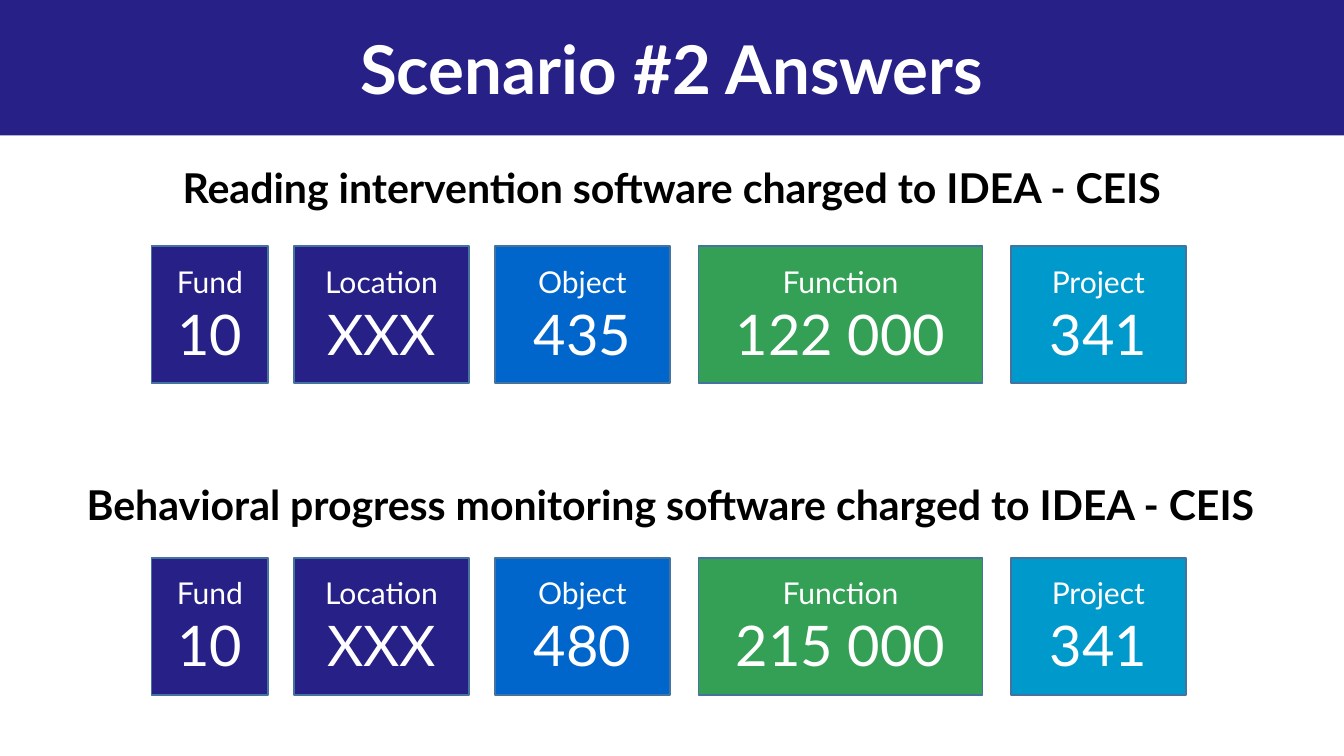
"""Build the slide with the account code answers for scenario 2."""
from pptx import Presentation
from pptx.dml.color import RGBColor
from pptx.enum.shapes import MSO_SHAPE
from pptx.enum.text import MSO_ANCHOR, PP_ALIGN
from pptx.util import Pt

RECT = MSO_SHAPE.RECTANGLE
MIDDLE = MSO_ANCHOR.MIDDLE
CENTER = PP_ALIGN.CENTER

NAVY = RGBColor(0x26, 0x20, 0x87)
BLUE = RGBColor(0x00, 0x66, 0xCC)
GREEN = RGBColor(0x33, 0xA0, 0x56)
CYAN = RGBColor(0x00, 0x99, 0xCC)
EDGE = RGBColor(0x43, 0x73, 0x9E)
WHITE = RGBColor(0xFF, 0xFF, 0xFF)
BLACK = RGBColor(0x00, 0x00, 0x00)

WIDTH, HEIGHT = 720, 405
FIELDS = [
    ("Fund", 81.2, 62.6, NAVY),
    ("Location", 157.5, 93.8, NAVY),
    ("Object", 265.1, 93.8, BLUE),
    ("Function", 374.2, 152.2, GREEN),
    ("Project", 541.5, 93.8, CYAN),
]
ANSWERS = [
    ("Reading intervention software charged to IDEA - CEIS",
     0, 83.5, 131.8, ["10", "XXX", "435", "122 000", "341"]),
    ("Behavioral progress monitoring software charged to IDEA - CEIS",
     -0.7, 253.4, 298.8, ["10", "XXX", "480", "215 000", "341"]),
]


def style(para, text, size, color, bold=False, after=0):
    """Fill a centred paragraph and set its font."""
    para.text = text
    para.alignment = CENTER
    para.space_after = Pt(after)
    font = para.font
    font.name = "Lato"
    font.size = Pt(size)
    font.bold = bold
    font.color.rgb = color


def add_block(slide, left, top, width, height, fill, edge=None):
    """Add a flat rectangle and return its text frame."""
    block = slide.shapes.add_shape(
        RECT, Pt(left), Pt(top), Pt(width), Pt(height))
    block.shadow.inherit = False
    block.fill.solid()
    block.fill.fore_color.rgb = fill
    if edge is None:
        block.line.fill.background()
    else:
        block.line.color.rgb = edge
        block.line.width = Pt(1)
    frame = block.text_frame
    frame.word_wrap = True
    frame.vertical_anchor = MIDDLE
    return frame


def add_title(slide, text):
    """Add the title band across the top."""
    frame = add_block(slide, 0, 0, WIDTH, 72.6, NAVY)
    style(frame.paragraphs[0], text, 36, WHITE, bold=True, after=30)


def add_heading(slide, text, left, top):
    """Add the heading above a row of fields."""
    box = slide.shapes.add_textbox(Pt(left), Pt(top), Pt(WIDTH), Pt(36.7))
    frame = box.text_frame
    frame.word_wrap = True
    style(frame.paragraphs[0], text, 22, BLACK, bold=True, after=4.4)


def add_fields(slide, top, codes):
    """Add a row of labelled account code fields."""
    for (label, left, width, fill), code in zip(FIELDS, codes):
        frame = add_block(slide, left, top, width, 73.6, fill, EDGE)
        style(frame.paragraphs[0], label, 16.1, WHITE)
        style(frame.add_paragraph(), code, 30, WHITE)


def main():
    """Build and save the slide."""
    deck = Presentation()
    deck.slide_width, deck.slide_height = Pt(WIDTH), Pt(HEIGHT)
    slide = deck.slides.add_slide(deck.slide_layouts[6])
    add_title(slide, "Scenario #2 Answers")
    for heading, left, top, row, codes in ANSWERS:
        add_heading(slide, heading, left, top)
        add_fields(slide, row, codes)
    deck.save("out.pptx")


if __name__ == "__main__":
    main()
